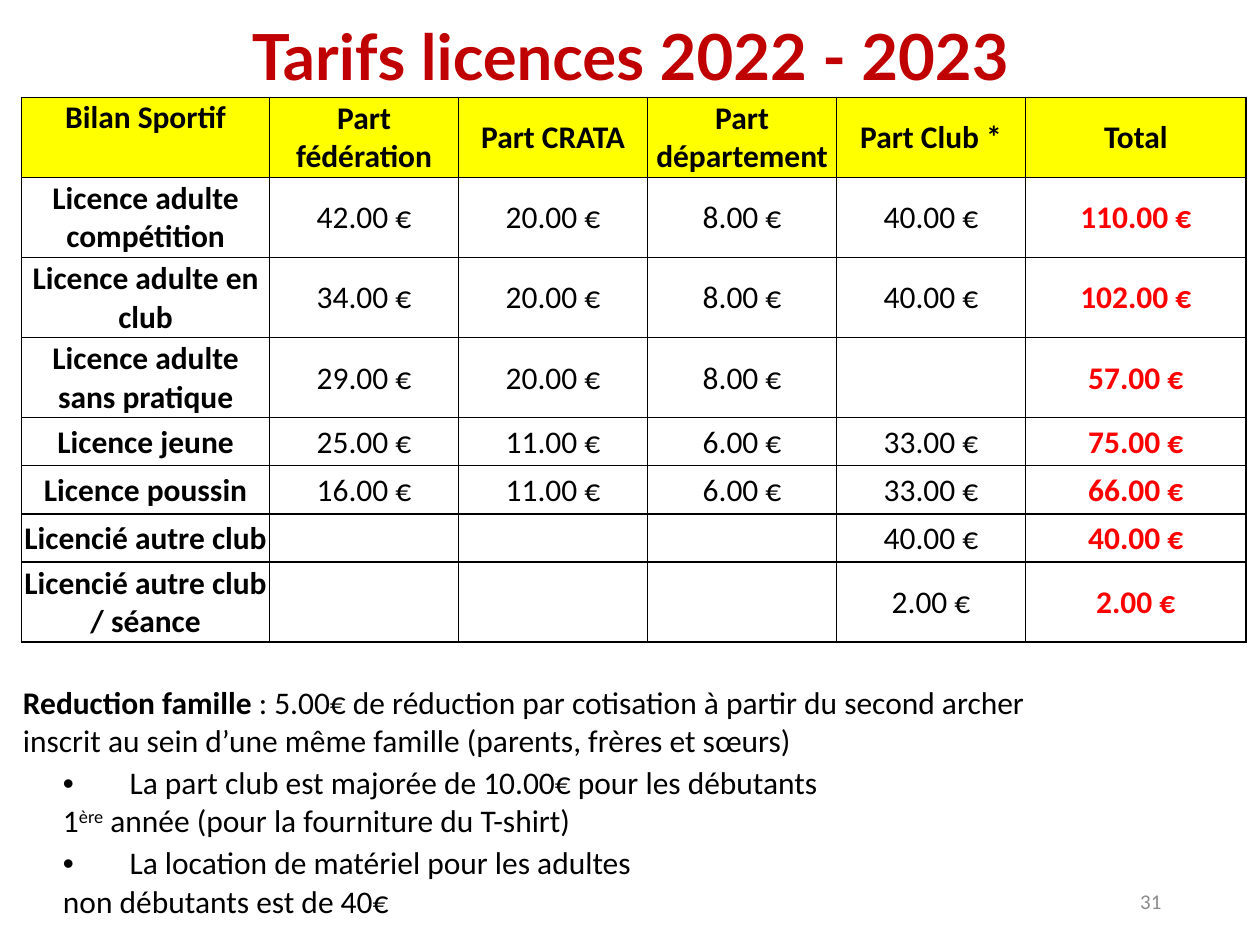
import dataclasses

import pptx
import pptx.dml.color
import pptx.enum.text
import pptx.oxml
import pptx.oxml.ns
import pptx.util
from pptx.util import Cm


@dataclasses.dataclass(frozen=True)
class Theme:
    """Colours, fonts and type sizes of the slide."""
    title_color: str = "C00000"
    text_color: str = "000000"
    total_color: str = "FF0000"
    header_fill: str = "FFFF00"
    number_color: str = "8C8C8C"
    title_font: str = "Lato"
    body_font: str = "Calibri"
    title_size: float = 40
    body_size: float = 19.8
    number_size: float = 13.2


THEME = Theme()
ALIGN = pptx.enum.text.PP_ALIGN
ANCHOR = pptx.enum.text.MSO_ANCHOR
NO_GRID_STYLE = "{2D5ABB26-0587-4C30-8999-92F81FD0307C}"

HEADINGS = ["Bilan Sportif", "Part fédération", "Part CRATA",
            "Part département", "Part Club *", "Total"]
FEES = [
    ["Licence adulte compétition", "42.00 €", "20.00 €", "8.00 €", "40.00 €", "110.00 €"],
    ["Licence adulte en club", "34.00 €", "20.00 €", "8.00 €", "40.00 €", "102.00 €"],
    ["Licence adulte sans pratique", "29.00 €", "20.00 €", "8.00 €", "", "57.00 €"],
    ["Licence jeune", "25.00 €", "11.00 €", "6.00 €", "33.00 €", "75.00 €"],
    ["Licence poussin", "16.00 €", "11.00 €", "6.00 €", "33.00 €", "66.00 €"],
    ["Licencié autre club", "", "", "", "40.00 €", "40.00 €"],
    ["Licencié autre club / séance", "", "", "", "2.00 €", "2.00 €"],
]
FAMILY_DISCOUNT = [
    ("Reduction famille", True, 0),
    ("\u00a0: 5.00€ de réduction par cotisation à partir du second archer inscrit "
     "au sein d’une même famille (parents, frères et sœurs)", False, 0),
]
BEGINNER_FEE = [
    ("\tLa part club est majorée de 10.00€ pour les débutants 1", False, 0),
    ("ère", False, 30000),
    (" année (pour la fourniture du T-shirt)", False, 0),
]
RENTAL_FEE = [("\tLa location de matériel pour les adultes non débutants est de 40€", False, 0)]
NOTES = [(FAMILY_DISCOUNT, 5, False), (BEGINNER_FEE, 4, True), (RENTAL_FEE, 3, True)]

TALL, SHORT, GAP = Cm(1.78), Cm(1.07), Cm(0.89)
ROW_HEIGHTS = [TALL] * 4 + [SHORT] * 3 + [TALL, GAP] + [TALL] * 3
COLUMN_WIDTHS = [Cm(5.51)] + [Cm(4.2)] * 4 + [Cm(4.9)]


def rgb(value):
    """Turn a hex string into a colour."""
    return pptx.dml.color.RGBColor.from_string(value)


def add_run(paragraph, text, size, color, font=THEME.body_font, bold=False, baseline=0):
    """Append one formatted run to a paragraph."""
    run = paragraph.add_run()
    run.text = text
    run.font.size = pptx.util.Pt(size)
    run.font.name = font
    run.font.bold = bold
    run.font.color.rgb = rgb(color)
    if baseline:
        run.font._element.set("baseline", str(baseline))


def add_label(slide, box, text, align, **style):
    """Place one line of text, centred vertically in its box."""
    frame = slide.shapes.add_textbox(*box).text_frame
    frame.word_wrap = True
    frame.vertical_anchor = ANCHOR.MIDDLE
    paragraph = frame.paragraphs[0]
    paragraph.alignment = align
    add_run(paragraph, text, **style)


def add_borders(cell):
    """Draw a thin line on all four sides of a cell."""
    properties = cell._tc.get_or_add_tcPr()
    for side in ("lnL", "lnR", "lnT", "lnB"):
        properties.append(pptx.oxml.parse_xml(
            f'<a:{side} {pptx.oxml.ns.nsdecls("a")} w="12700"><a:solidFill>'
            f'<a:srgbClr val="{THEME.text_color}"/></a:solidFill></a:{side}>'))


def add_bullet(paragraph):
    """Give a paragraph a bullet and a tab stop for its first line."""
    properties = paragraph._p.get_or_add_pPr()
    properties.set("marL", "0")
    properties.set("indent", "0")
    namespace = pptx.oxml.ns.nsdecls("a")
    for element in (f'<a:buFont {namespace} typeface="Arial"/>',
                    f'<a:buChar {namespace} char="•"/>',
                    f'<a:tabLst {namespace}><a:tab pos="{Cm(1.48)}" algn="l"/></a:tabLst>'):
        properties.append(pptx.oxml.parse_xml(element))


def prepare_cell(cell):
    """Set the margins and anchor that all cells share."""
    cell.margin_left = cell.margin_right = cell.margin_top = Cm(0.03)
    cell.margin_bottom = 0
    cell.vertical_anchor = ANCHOR.MIDDLE
    cell.text_frame.paragraphs[0].font.size = pptx.util.Pt(THEME.body_size)


def fill_fees(table):
    """Write the heading row and the fee rows."""
    for row, values in enumerate([HEADINGS] + FEES):
        for column, value in enumerate(values):
            cell = table.cell(row, column)
            add_borders(cell)
            is_heading = row == 0
            is_total = column == len(HEADINGS) - 1 and not is_heading
            if is_heading:
                cell.fill.solid()
                cell.fill.fore_color.rgb = rgb(THEME.header_fill)
            else:
                cell.fill.background()
            if value:
                paragraph = cell.text_frame.paragraphs[0]
                paragraph.alignment = ALIGN.CENTER
                add_run(paragraph, value, THEME.body_size,
                        THEME.total_color if is_total else THEME.text_color,
                        bold=is_heading or is_total or column == 0)
    table.cell(0, 0).vertical_anchor = ANCHOR.TOP


def fill_notes(table):
    """Write the notes in merged cells at the foot of the table."""
    first_row = len(ROW_HEIGHTS) - len(NOTES)
    for row, (runs, span, bulleted) in enumerate(NOTES, first_row):
        cell = table.cell(row, 0)
        cell.merge(table.cell(row, span - 1))
        paragraph = cell.text_frame.paragraphs[0]
        if bulleted:
            cell.margin_left = Cm(0.92)
            add_bullet(paragraph)
        for text, bold, baseline in runs:
            add_run(paragraph, text, THEME.body_size, THEME.text_color,
                    bold=bold, baseline=baseline)


def add_fee_table(slide, left, top):
    """Build the fee table with its notes from its top left corner."""
    table = slide.shapes.add_table(len(ROW_HEIGHTS), len(COLUMN_WIDTHS), left, top,
                                   sum(COLUMN_WIDTHS), sum(ROW_HEIGHTS)).table
    table.first_row = table.horz_banding = False
    table._tbl.tblPr.find(pptx.oxml.ns.qn("a:tableStyleId")).text = NO_GRID_STYLE
    for column, width in zip(table.columns, COLUMN_WIDTHS):
        column.width = width
    for row, height in zip(table.rows, ROW_HEIGHTS):
        row.height = height
    for cell in table.iter_cells():
        prepare_cell(cell)
    fill_fees(table)
    fill_notes(table)


def main():
    """Build the fee slide and save it."""
    deck = pptx.Presentation()
    deck.slide_width, deck.slide_height = Cm(28), Cm(21)
    slide = deck.slides.add_slide(deck.slide_layouts[6])
    add_label(slide, (Cm(1.93), Cm(0.3), Cm(24.15), Cm(1.85)),
              "Tarifs licences 2022 - 2023", ALIGN.CENTER, size=THEME.title_size,
              color=THEME.title_color, font=THEME.title_font, bold=True)
    add_fee_table(slide, Cm(0.48), Cm(2.16))
    add_label(slide, (Cm(19.76), Cm(19.46), Cm(6.3), Cm(1.12)), "31", ALIGN.RIGHT,
              size=THEME.number_size, color=THEME.number_color)
    deck.save("out.pptx")


if __name__ == "__main__":
    main()
